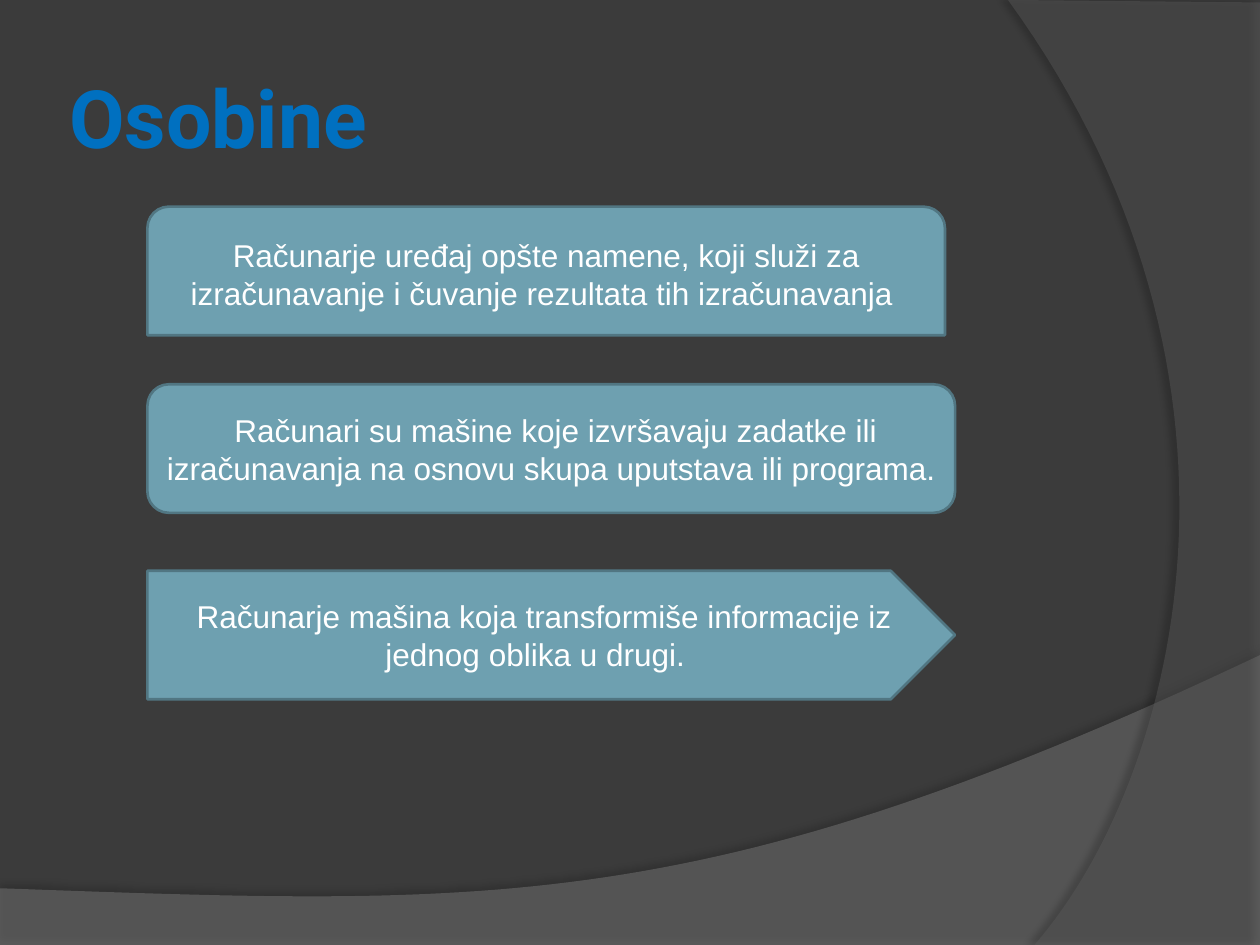
from lxml.etree import SubElement
from pptx import Presentation
from pptx.dml.color import RGBColor
from pptx.enum.shapes import MSO_SHAPE as Shape
from pptx.enum.text import MSO_ANCHOR as Anchor, PP_ALIGN as Align
from pptx.oxml.ns import qn
from pptx.util import Inches, Pt

W, H = 10, 7.5
TITLE = "Osobine"
BOXES = [
    (Shape.ROUND_2_SAME_RECTANGLE, 1.64, 6.33, 0,
     "Računarje uređaj opšte namene, koji služi za izračunavanje i čuvanje rezultata tih izračunavanja "),
    (Shape.FLOWCHART_ALTERNATE_PROCESS, 3.05, 6.41, 0.07,
     "Računari su mašine koje izvršavaju zadatke ili izračunavanja na osnovu skupa uputstava ili programa. "),
    (Shape.PENTAGON, 4.53, 6.41, 0.14,
     "Računarje mašina koja transformiše informacije iz jednog oblika u drugi."),
]
BOX_LEFT, BOX_HEIGHT = 1.17, 1.02
WAVES = [
    dict(corners=[(0, 7.05), (0, H), (W, H)],
         curve=[(W, 5.2), (5.59, 7.29), (3.91, 7.19), (0, 7.05)],
         fill="7F7F7F", opacity=45, shadow=(35, 4, 3.5, 270)),
    dict(corners=[(W, 0.02), (W, H)],
         curve=[(8.21, H), (9.35, 6.19), (10.18, 3), (8, 0)],
         fill="5E5E5E", opacity=40, shadow=(45, 4, 4, 180)),
]
CURVE_STEPS = 60


def color(value):
    return RGBColor.from_string(value)


def bezier(curve):
    for i in range(CURVE_STEPS + 1):
        t = i / CURVE_STEPS
        weights = ((1 - t) ** 3, 3 * t * (1 - t) ** 2, 3 * t * t * (1 - t), t ** 3)
        yield tuple(sum(w * pt[axis] for w, pt in zip(weights, curve)) for axis in (0, 1))


def set_opacity(clr, percent):
    SubElement(clr, qn("a:alpha"), val=str(percent * 1000))


def add_shadow(sp, opacity, blur, dist, angle):
    effects = sp._element.spPr.get_or_change_to_effectLst() if hasattr(
        sp._element.spPr, "get_or_change_to_effectLst") else sp._element.spPr.find(qn("a:effectLst"))
    outer = SubElement(effects, qn("a:outerShdw"), blurRad=str(Pt(blur)), dist=str(Pt(dist)),
                       dir=str(angle * 60000), algn="ctr", rotWithShape="0")
    set_opacity(SubElement(outer, qn("a:srgbClr"), val="000000"), opacity)


def add_wave(s, corners, curve, fill, opacity, shadow):
    points = [(Inches(x), Inches(y)) for x, y in corners + list(bezier(curve))]
    builder = s.shapes.build_freeform(*points[0])
    builder.add_line_segments(points[1:], close=True)
    sp = builder.convert_to_shape()
    sp.shadow.inherit = False
    sp.fill.solid()
    sp.fill.fore_color.rgb = color(fill)
    sp.line.fill.background()
    set_opacity(sp._element.spPr.find(qn("a:solidFill"))[0], opacity)
    add_shadow(sp, *shadow)


def add_run(p, text, font, size, hue, bold=False):
    r = p.add_run()
    r.text = text
    r.font.name, r.font.size, r.font.bold = font, Pt(size), bold
    r.font.color.rgb = color(hue)


def add_title(s):
    sp = s.shapes.title
    sp.left, sp.top, sp.width, sp.height = map(Inches, (0.5, 0.3, 8.17, 1.25))
    tf = sp.text_frame
    tf.vertical_anchor = Anchor.MIDDLE
    tf.margin_left = tf.margin_right = tf.margin_top = tf.margin_bottom = Inches(0.05)
    p = tf.paragraphs[0]
    p.alignment = Align.LEFT
    add_run(p, TITLE, "Roboto", 46, "0070C0", True)
    s.shapes._spTree.append(sp._element)


def add_box(s, kind, top, width, indent, text):
    sp = s.shapes.add_shape(kind, *map(Inches, (BOX_LEFT, top, width, BOX_HEIGHT)))
    sp.shadow.inherit = False
    sp.fill.solid()
    sp.fill.fore_color.rgb = color("6EA0B0")
    sp.line.color.rgb = color("517682")
    sp.line.width = Pt(1.5)
    tf = sp.text_frame
    tf.word_wrap = True
    tf.vertical_anchor = Anchor.MIDDLE
    p = tf.paragraphs[0]
    p.alignment = Align.CENTER
    p._p.get_or_add_pPr().set("indent", str(Inches(indent)))
    add_run(p, text, "Arial", 18, "FFFFFF")


def main():
    prs = Presentation()
    prs.slide_width, prs.slide_height = Inches(W), Inches(H)
    s = prs.slides.add_slide(prs.slide_layouts[5])
    s.background.fill.solid()
    s.background.fill.fore_color.rgb = color("3B3B3B")
    for wave in WAVES:
        add_wave(s, **wave)
    add_title(s)
    for box in BOXES:
        add_box(s, *box)
    prs.save("out.pptx")


if __name__ == "__main__":
    main()
